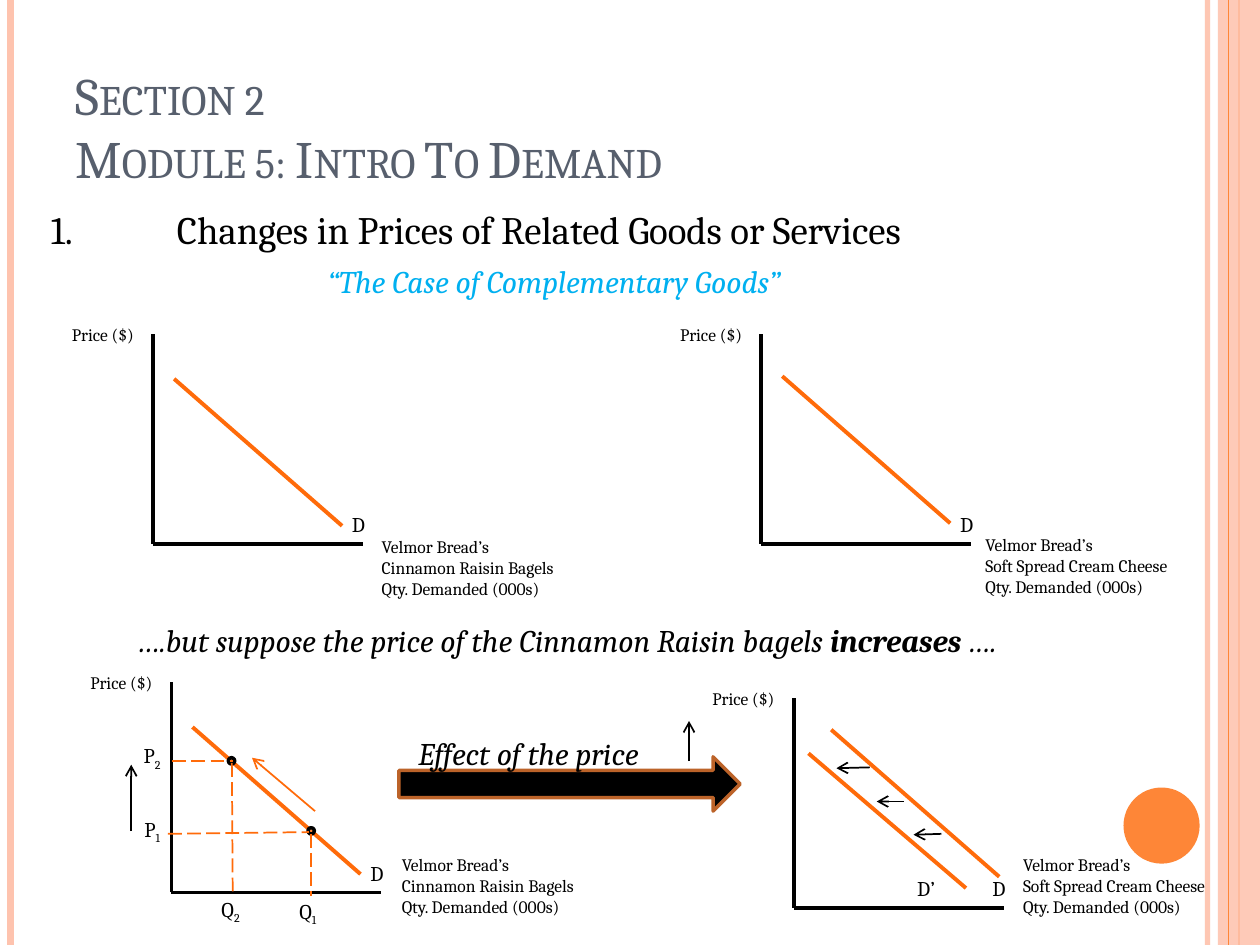
from dataclasses import dataclass
from typing import Optional

from lxml import etree
from pptx import Presentation
from pptx import util as u
from pptx.dml.color import RGBColor
from pptx.enum import dml, shapes, text
from pptx.oxml import ns

BLACK = RGBColor(0x00, 0x00, 0x00)
SLATE = RGBColor(0x57, 0x5F, 0x6D)
ORANGE = RGBColor(0xFE, 0x86, 0x37)
CURVE = RGBColor(0xFF, 0x6B, 0x0A)
PEACH = RGBColor(0xFE, 0xC3, 0xAE)
BROWN = RGBColor(0xBC, 0x63, 0x29)
SKY = RGBColor(0x00, 0xB0, 0xF0)
FONT = "Cambria"
AXIS = 120  # length of both axes of every graph


@dataclass
class Line:
    x1: float
    y1: float
    x2: float
    y2: float
    color: RGBColor = BLACK
    width: float = 2.25
    dashed: bool = False
    arrow: bool = False
    opacity: int = 100


@dataclass
class Graph:
    x: float  # origin of the axes
    y: float
    product: str
    caption_dx: float
    caption_rise: float
    curve_dx: float = 12
    curve_rise: float = 94.5


@dataclass
class Label:
    x: float
    y: float
    letter: str
    subscript: str = ""
    width: float = 28


def set_opacity(fill, percent: int) -> None:
    color = fill._xPr.find(".//" + ns.qn("a:srgbClr"))
    etree.SubElement(color, ns.qn("a:alpha"), val=str(percent * 1000))


def draw_line(page, line: Line) -> None:
    connector = page.shapes.add_connector(
        shapes.MSO_CONNECTOR.STRAIGHT,
        u.Pt(line.x1), u.Pt(line.y1), u.Pt(line.x2), u.Pt(line.y2))
    connector.line.color.rgb = line.color
    connector.line.width = u.Pt(line.width)
    if line.opacity < 100:
        set_opacity(connector.line.fill, line.opacity)
    if line.dashed:
        connector.line.dash_style = dml.MSO_LINE.LONG_DASH
    properties = connector._element.spPr
    if line.arrow:
        etree.SubElement(properties.find(ns.qn("a:ln")), ns.qn("a:tailEnd"), type="arrow")
    etree.SubElement(properties, ns.qn("a:effectLst"))


def draw_shape(page, kind, x: float, y: float, width: float, height: float,
               fill: RGBColor, outline: Optional[RGBColor] = None, opacity: int = 100) -> None:
    shape = page.shapes.add_shape(kind, u.Pt(x), u.Pt(y), u.Pt(width), u.Pt(height))
    shape.shadow.inherit = False
    shape.fill.solid()
    shape.fill.fore_color.rgb = fill
    if opacity < 100:
        set_opacity(shape.fill, opacity)
    if outline is None:
        shape.line.fill.background()
    else:
        shape.line.color.rgb = outline
        shape.line.width = u.Pt(2)


def add_text(page, x: float, y: float, width: float, height: float, paragraphs, *,
             size: float = 10, color: RGBColor = BLACK, italic: bool = False,
             wrap: bool = False, anchor=text.MSO_ANCHOR.TOP, small_caps: bool = False,
             tab_stop: Optional[float] = None) -> None:
    """Paragraphs are lists of (words, style); style is "", "bold", "sub" or "break"."""
    box = page.shapes.add_textbox(u.Pt(x), u.Pt(y), u.Pt(width), u.Pt(height))
    frame = box.text_frame
    frame.word_wrap = wrap
    frame.auto_size = text.MSO_AUTO_SIZE.NONE if wrap else text.MSO_AUTO_SIZE.SHAPE_TO_FIT_TEXT
    frame.vertical_anchor = anchor
    for index, spans in enumerate(paragraphs):
        para = frame.add_paragraph() if index else frame.paragraphs[0]
        if tab_stop is not None:
            stops = etree.SubElement(para._p.get_or_add_pPr(), ns.qn("a:tabLst"))
            etree.SubElement(stops, ns.qn("a:tab"), pos=str(u.Pt(tab_stop)), algn="l")
        for words, style in spans:
            if style == "break":  # these words start a new line
                para.add_line_break()
            span = para.add_run()
            span.text = words
            span.font.name = FONT
            span.font.size = u.Pt(size)
            span.font.color.rgb = color
            span.font.italic = italic
            span.font.bold = style == "bold"
            if style == "sub":
                span.font._element.set("baseline", "-25000")
            if small_caps:
                span.font._element.set("cap", "small")


def draw_label(page, label: Label) -> None:
    spans = [(label.letter, "")]
    if label.subscript:
        spans.append((label.subscript, "sub"))
    add_text(page, label.x, label.y, label.width, 21.5, [spans], size=12)


def draw_graph(page, graph: Graph) -> None:
    x, y = graph.x, graph.y
    start_x, start_y = x + graph.curve_dx, y - graph.curve_rise
    draw_line(page, Line(x, y - AXIS, x, y))
    draw_line(page, Line(x, y, x + AXIS, y))
    draw_line(page, Line(start_x, start_y, start_x + 96, start_y + 84, CURVE))
    add_text(page, x - 53.5, y - 129.5, 54, 19.5, [[("Price ($)", "")]])
    draw_label(page, Label(x + 106.5, y - 22, "D", width=24))
    caption = ["Velmor Bread’s", graph.product, "Qty. Demanded (000s)"]
    add_text(page, x + graph.caption_dx, y - graph.caption_rise,
             142 if graph.product == CHEESE else 137.5, 55.5,
             [[(words, "")] for words in caption])


BAGELS = "Cinnamon Raisin Bagels"
CHEESE = "Soft Spread Cream Cheese"
GRAPHS = [
    Graph(87.5, 311, BAGELS, 123.5, 8),
    Graph(435, 311, CHEESE, 121, 9.5, curve_rise=96),
    Graph(98, 510, BAGELS, 124.5, 25.5),
    Graph(453.5, 519, CHEESE, 124, 34.5, curve_dx=21.5, curve_rise=102),
]
SIDE_LINES = [
    Line(690, 0, 690, 540, PEACH, 3, opacity=93),
    Line(6, 0, 6, 540, PEACH, 4.5),
    Line(708, 0, 708, 540, ORANGE, 1.5),
]
DETAIL_LINES = [
    # Guides from the two points to the axes
    Line(96, 476.5, 176.5, 475.5, CURVE, 1, dashed=True),
    Line(98.5, 435, 133, 435, CURVE, 1, dashed=True),
    Line(132.5, 436, 133, 510, CURVE, 1, dashed=True),
    Line(177.75, 476.5, 177.75, 512, CURVE, 1, dashed=True),
    # Price rise and movement along the curve
    Line(75, 475, 75, 437, width=1, arrow=True),
    Line(180, 463.5, 144, 433, CURVE, 1, arrow=True),
    Line(393.75, 435, 393.75, 412, width=1, arrow=True),
    # Shifted demand curve and its shift arrows
    Line(462, 430.5, 552, 507.5, CURVE),
    Line(497, 438.5, 478, 439, width=1, arrow=True),
    Line(516.5, 458, 501, 458, width=1, arrow=True),
    Line(538, 476.5, 522, 477, width=1, arrow=True),
]
LABELS = [
    Label(119.5, 508.5, "Q", "2"), Label(164, 510, "Q", "1"),
    Label(75, 421, "P", "2"), Label(75.5, 463, "P", "1"),
    Label(517, 497, "D’", width=26.5),
]


def main() -> None:
    deck = Presentation()
    deck.slide_width, deck.slide_height = u.Pt(720), u.Pt(540)
    page = deck.slides.add_slide(deck.slide_layouts[6])
    kinds = shapes.MSO_SHAPE

    # Side decoration
    for line in SIDE_LINES:
        draw_line(page, line)
    draw_shape(page, kinds.RECTANGLE, 696, 0, 24, 540, PEACH, opacity=87)
    draw_line(page, Line(702, 0, 702, 540, ORANGE, 0.75))
    draw_shape(page, kinds.OVAL, 642, 450, 43.5, 43.5, ORANGE)

    # Headings
    add_text(page, 36, 21.5, 588, 90,
             [[("Section 2", ""), ("Module 5: Intro To Demand", "break")]],
             size=30, color=SLATE, wrap=True, anchor=text.MSO_ANCHOR.BOTTOM, small_caps=True)
    add_text(page, 22, 114, 588, 42,
             [[("1.\tChanges in Prices of Related Goods or Services", "")]],
             size=22.2, wrap=True, tab_stop=72)
    add_text(page, 180, 146, 317.5, 29, [[("“The Case of Complementary Goods”", "")]],
             size=18, color=SKY, italic=True)
    add_text(page, 71.5, 351.5, 602, 29,
             [[(f"….but suppose the price of the {BAGELS.replace('Bagels', 'bagels')} ", ""),
               ("increases", "bold"), (" ….", "")]], size=18, italic=True)

    # Graphs and their details
    for graph in GRAPHS:
        draw_graph(page, graph)
    for x, y in [(130.5, 433), (176, 473)]:
        draw_shape(page, kinds.OVAL, x, y, 3.6, 3.6, ORANGE, BLACK)
    for line in DETAIL_LINES:
        draw_line(page, line)
    for label in LABELS:
        draw_label(page, label)

    # Effect arrow
    draw_shape(page, kinds.RIGHT_ARROW, 228, 432.5, 195, 31, BLACK, BROWN)
    add_text(page, 232, 416, 168, 29, [[("Effect of the price", "")]], size=18, italic=True)

    deck.save("out.pptx")


if __name__ == "__main__":
    main()
